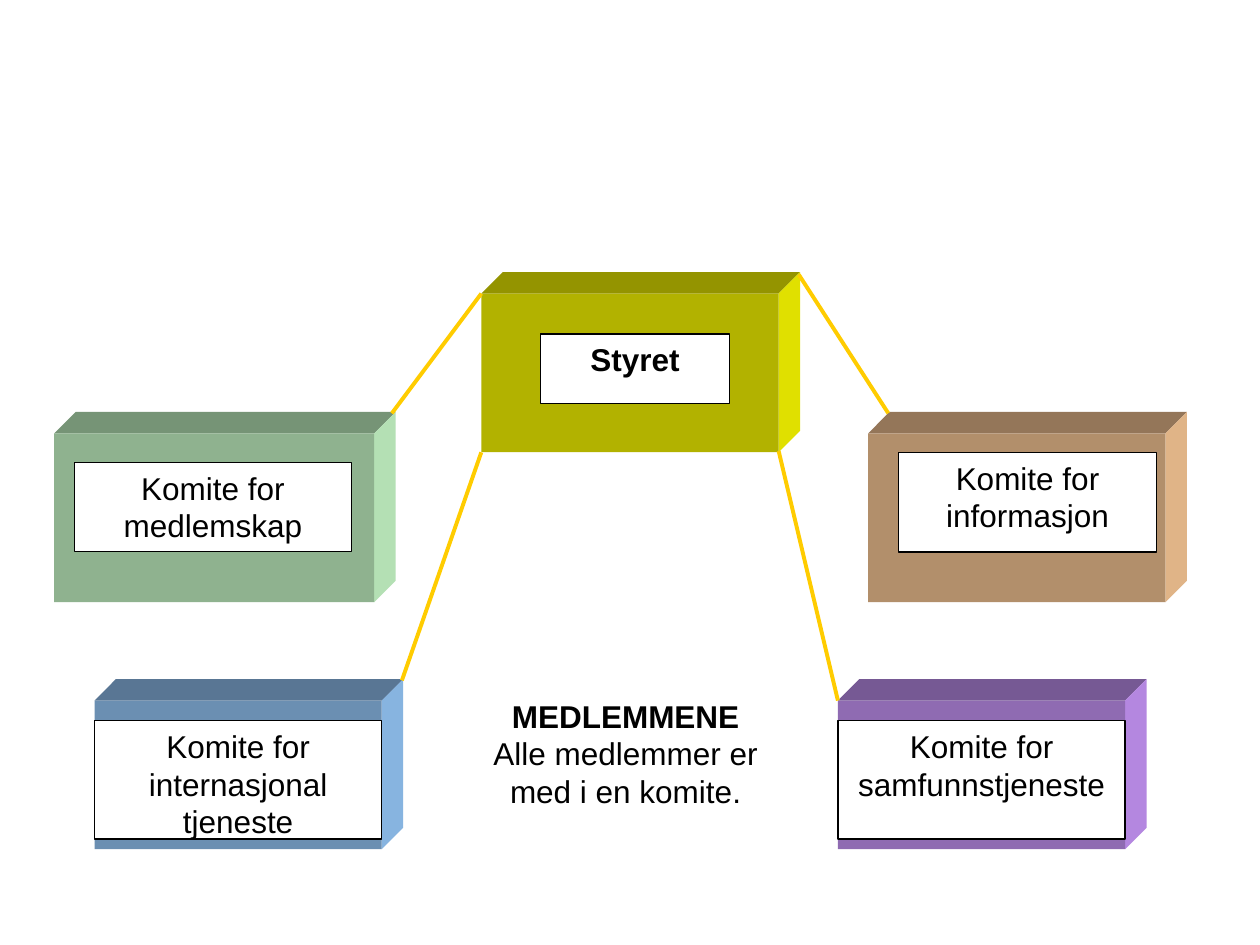
from pptx import Presentation
from pptx.dml.color import RGBColor
from pptx.enum.shapes import MSO_CONNECTOR, MSO_SHAPE
from pptx.enum.text import MSO_ANCHOR, PP_ALIGN
from pptx.oxml.ns import qn
from pptx.util import Inches, Pt
from lxml import etree

COLORS = {
    "yellow": "FFFF00", "green": "CCFFCC", "purple": "CC99FF",
    "orange": "FFCC99", "blue": "99CCFF",
    "white": "FFFFFF", "black": "000000", "link": "FFCC00",
}
FONT, FONT_SIZE = "Arial", 18
DEPTH = 0.17
FRONT_SHADE, TOP_SHADE, SIDE_SHADE = 0.7, 0.58, 0.88

# Block colour, block box, label text, label box, bold
BLOCKS = [
    ("yellow", (3.82, 2.33, 2.36, 1.26), "Styret", (4.29, 2.65, 1.5, 0.55), True),
    ("green", (0.43, 3.44, 2.54, 1.34), "Komite for medlemskap",
     (0.59, 3.67, 2.2, 0.71), False),
    ("orange", (6.89, 3.44, 2.36, 1.34), "Komite for informasjon",
     (7.13, 3.59, 2.05, 0.79), False),
    ("blue", (0.75, 5.56, 2.28, 1.18), "Komite for internasjonal tjeneste",
     (0.75, 5.72, 2.28, 0.94), False),
    ("purple", (6.65, 5.56, 2.28, 1.18), "Komite for samfunnstjeneste",
     (6.65, 5.72, 2.28, 0.94), False),
]
LINKS = [
    ((6.18, 3.58), (6.65, 5.56)),
    ((3.82, 2.33), (3.11, 3.28)),
    ((6.34, 2.18), (7.05, 3.28)),
    ((3.82, 3.59), (3.19, 5.4)),
]
MEMBERS_BOX = (3.27, 5.48, 3.39, 1.3)
MEMBERS_HEADING = "MEDLEMMENE"
MEMBERS_LINES = ["Alle medlemmer er", "med i en komite."]


def shade(name, factor):
    return RGBColor(*(round(part * factor) for part in bytes.fromhex(COLORS[name])))


def paint(shape, color):
    shape.shadow.inherit = False
    shape.fill.solid()
    shape.fill.fore_color.rgb = color
    shape.line.fill.background()


def add_rectangle(slide, box, color):
    shape = slide.shapes.add_shape(MSO_SHAPE.RECTANGLE, *map(Inches, box))
    paint(shape, color)
    return shape


def add_face(slide, points, color):
    corners = [(Inches(x), Inches(y)) for x, y in points]
    builder = slide.shapes.build_freeform(*corners[0])
    builder.add_line_segments(corners[1:], close=True)
    paint(builder.convert_to_shape(), color)


def add_block(slide, name, box):
    left, top, width, height = box
    right, bottom = left + width, top + height
    back_right, back_top = right + DEPTH, top - DEPTH
    add_face(slide, [(left, top), (left + DEPTH, back_top),
                     (back_right, back_top), (right, top)], shade(name, TOP_SHADE))
    add_face(slide, [(right, top), (back_right, back_top),
                     (back_right, bottom - DEPTH), (right, bottom)],
             shade(name, SIDE_SHADE))
    add_rectangle(slide, box, shade(name, FRONT_SHADE))


def add_run(paragraph, text, bold=False):
    paragraph.alignment = PP_ALIGN.CENTER
    run = paragraph.add_run()
    run.text = text
    run.font.name = FONT
    run.font.size = Pt(FONT_SIZE)
    run.font.bold = bold
    run.font.color.rgb = shade("black", 1)


def add_label(slide, text, box, bold):
    shape = add_rectangle(slide, box, shade("white", 1))
    shape.line.color.rgb = shade("black", 1)
    shape.line.width = Pt(0.75)
    frame = shape.text_frame
    frame.word_wrap = True
    frame.vertical_anchor = MSO_ANCHOR.TOP
    add_run(frame.paragraphs[0], text, bold)


def add_link(slide, start, end):
    connector = slide.shapes.add_connector(
        MSO_CONNECTOR.STRAIGHT, *map(Inches, start + end))
    connector.line.color.rgb = shade("link", 1)
    connector.line.width = Pt(2.25)
    etree.SubElement(connector._element.spPr, qn("a:effectLst"))


def add_members(slide):
    frame = slide.shapes.add_textbox(*map(Inches, MEMBERS_BOX)).text_frame
    frame.word_wrap = True
    add_run(frame.paragraphs[0], MEMBERS_HEADING, bold=True)
    paragraph = frame.add_paragraph()
    for index, line in enumerate(MEMBERS_LINES):
        if index:
            paragraph.add_line_break()
        add_run(paragraph, line)


def main():
    presentation = Presentation()
    presentation.slide_width, presentation.slide_height = Inches(10), Inches(7.5)
    slide = presentation.slides.add_slide(presentation.slide_layouts[6])

    # Board and committees
    for name, box, text, label_box, bold in BLOCKS:
        add_block(slide, name, box)
        add_label(slide, text, label_box, bold)

    # Links from the board to the committees
    for start, end in LINKS:
        add_link(slide, start, end)

    # Members
    add_members(slide)
    presentation.save("out.pptx")


if __name__ == "__main__":
    main()
